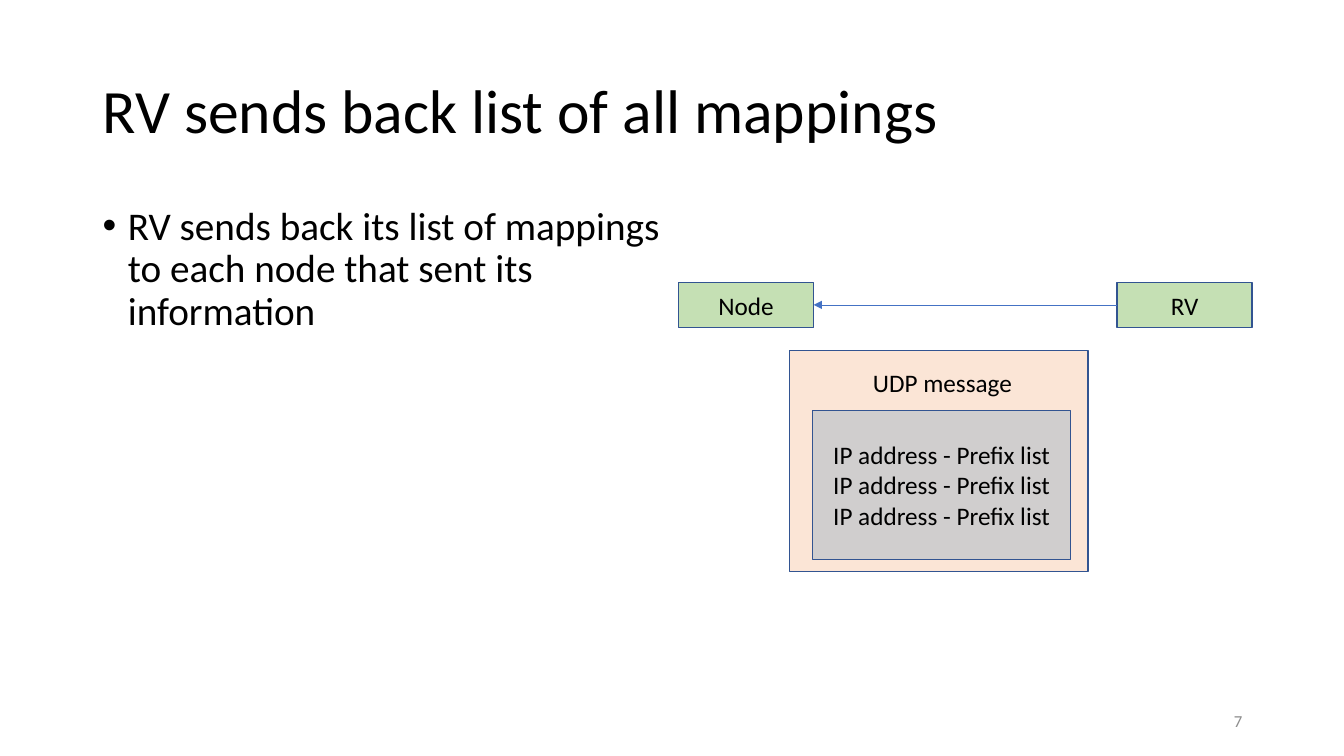
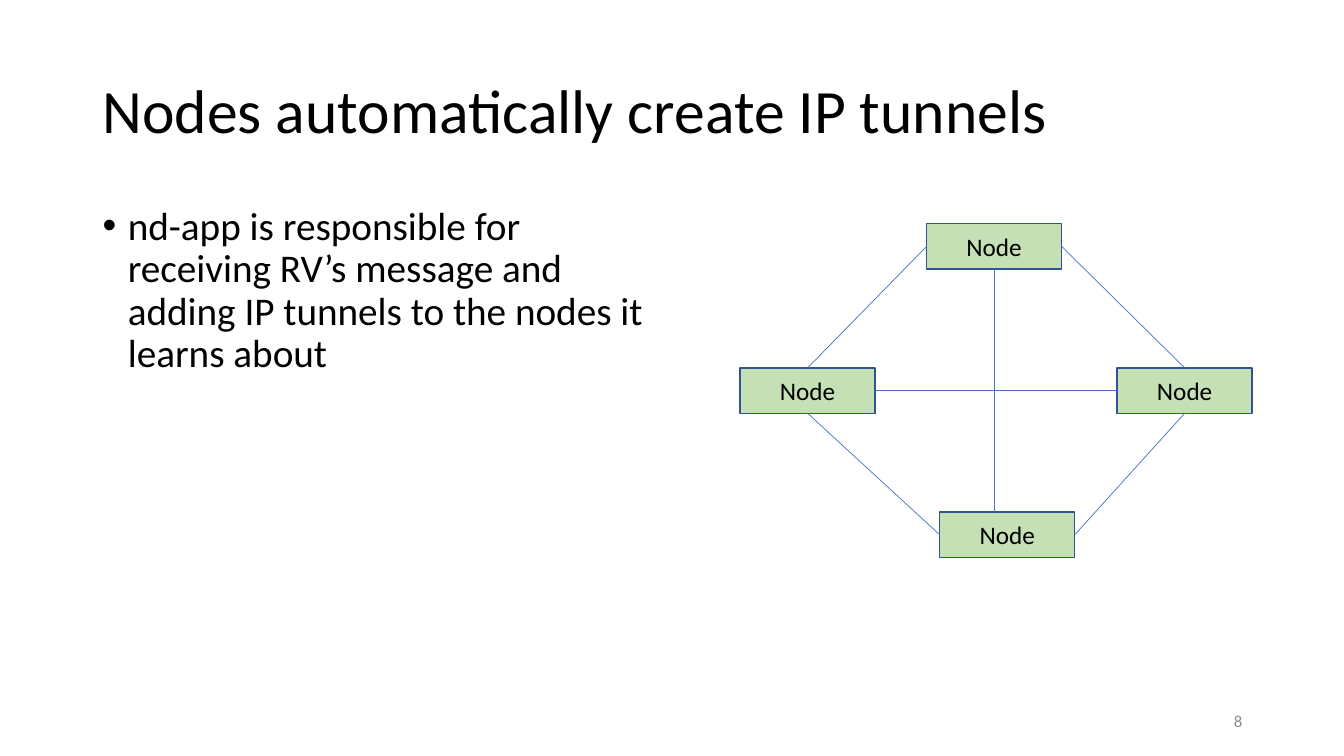
from dataclasses import dataclass
from typing import Any, NamedTuple, Optional

from lxml.etree import SubElement
from pptx import Presentation
from pptx.dml.color import RGBColor
from pptx.enum.shapes import MSO_CONNECTOR, MSO_SHAPE
from pptx.enum.text import MSO_ANCHOR, PP_ALIGN
from pptx.oxml.ns import qn
from pptx.util import Inches, Pt

FONT = "Calibri"
BLACK = RGBColor(0x00, 0x00, 0x00)
GRAY = RGBColor(0x8C, 0x8C, 0x8C)
GREEN = RGBColor(0xC5, 0xE0, 0xB4)
PEACH = RGBColor(0xFB, 0xE5, 0xD6)
SILVER = RGBColor(0xD0, 0xCE, 0xCE)
BORDER = RGBColor(0x32, 0x54, 0x91)
LINK = RGBColor(0x44, 0x72, 0xC4)

TOP, LEFT, BOTTOM, RIGHT = range(4)
NODE_W, NODE_H = 1.34, 0.45


class Area(NamedTuple):
    left: float
    top: float
    width: float
    height: float

    def lengths(self) -> list:
        return [Inches(v) for v in self]


@dataclass(frozen=True)
class TextStyle:
    size: int
    paragraph: dict
    color: RGBColor = BLACK
    anchor: MSO_ANCHOR = MSO_ANCHOR.TOP
    bullet: bool = False


@dataclass(frozen=True)
class Box:
    area: Area
    fill: RGBColor
    lines: tuple = ()


@dataclass(frozen=True)
class Link:
    start: str
    start_side: int
    end: str
    end_side: int
    arrow: bool = False


TITLE = TextStyle(44, {"line_spacing": 0.9}, anchor=MSO_ANCHOR.MIDDLE)
BODY = TextStyle(28, {"line_spacing": 0.9, "space_before": Pt(10)}, bullet=True)
NUMBER = TextStyle(12, {"alignment": PP_ALIGN.RIGHT}, GRAY, MSO_ANCHOR.MIDDLE)
LABEL = TextStyle(18, {"alignment": PP_ALIGN.CENTER}, anchor=MSO_ANCHOR.MIDDLE)
CAPTION = TextStyle(18, {"alignment": PP_ALIGN.LEFT})

TITLE_AREA = Area(0.92, 0.4, 11.5, 1.45)
NUMBER_AREA = Area(9.42, 6.95, 3, 0.4)


def write(sp: Any, lines: tuple, style: TextStyle) -> None:
    tf = sp.text_frame
    for name, value in {"word_wrap": True, "vertical_anchor": style.anchor}.items():
        setattr(tf, name, value)
    for i, line in enumerate(lines):
        p = tf.add_paragraph() if i else tf.paragraphs[0]
        for name, value in style.paragraph.items():
            setattr(p, name, value)
        if style.bullet:
            add_bullet(p)
        r = p.add_run()
        r.text = line
        for name, value in {"name": FONT, "size": Pt(style.size)}.items():
            setattr(r.font, name, value)
        r.font.color.rgb = style.color


def add_bullet(p: Any) -> None:
    pPr = p._p.get_or_add_pPr()
    indent = Inches(0.25)
    pPr.set("marL", str(indent))
    pPr.set("indent", str(-indent))
    SubElement(pPr, qn("a:buFont")).set("typeface", "Arial")
    SubElement(pPr, qn("a:buChar")).set("char", "•")


def add_text(s: Any, area: Area, text: str, style: TextStyle) -> None:
    write(s.shapes.add_textbox(*area.lengths()), (text,), style)


def add_box(s: Any, box: Box) -> Any:
    sp = s.shapes.add_shape(MSO_SHAPE.RECTANGLE, *box.area.lengths())
    sp.shadow.inherit = False
    sp.fill.solid()
    sp.fill.fore_color.rgb = box.fill
    sp.line.color.rgb = BORDER
    sp.line.width = Pt(1)
    write(sp, box.lines, LABEL)
    return sp


def add_line(s: Any, x1: float, y1: float, x2: float, y2: float, arrow: bool = False) -> Any:
    ends = [Inches(v) for v in (x1, y1, x2, y2)]
    line = s.shapes.add_connector(MSO_CONNECTOR.STRAIGHT, *ends)
    line.line.color.rgb = LINK
    line.line.width = Pt(0.5)
    if arrow:
        SubElement(line.line._get_or_add_ln(), qn("a:tailEnd")).set("type", "triangle")
    SubElement(line._element.spPr, qn("a:effectLst"))
    return line


def add_links(s: Any, nodes: dict, links: tuple) -> None:
    for link in links:
        line = add_line(s, 0, 0, 0, 0, link.arrow)
        line.begin_connect(nodes[link.start], link.start_side)
        line.end_connect(nodes[link.end], link.end_side)


def node(left: float, top: float, label: str = "Node") -> Box:
    return Box(Area(left, top, NODE_W, NODE_H), GREEN, (label,))


def add_page(prs: Any, number: int, title: str, body: str, body_width: float) -> Any:
    s = prs.slides.add_slide(prs.slide_layouts[6])
    add_text(s, TITLE_AREA, title, TITLE)
    add_text(s, Area(0.92, 2, body_width, 4.76), body, BODY)
    add_text(s, NUMBER_AREA, str(number), NUMBER)
    return s


def mappings_slide(prs: Any) -> None:
    s = add_page(
        prs, 7, "RV sends back list of all mappings",
        "RV sends back its list of mappings to each node that sent its information", 5.8,
    )
    boxes = {"node": node(6.73, 2.8), "rv": node(11.08, 2.8, "RV")}
    nodes = {name: add_box(s, box) for name, box in boxes.items()}
    add_links(s, nodes, (Link("rv", LEFT, "node", RIGHT, arrow=True),))
    message = Box(Area(7.83, 3.48, 2.96, 2.19), PEACH)
    payload = Box(Area(8.06, 4.07, 2.56, 1.48), SILVER, ("IP address - Prefix list",) * 3)
    for box in (message, payload):
        add_box(s, box)
    add_text(s, Area(8.56, 3.59, 1.71, 0.4), "UDP message", CAPTION)


def tunnels_slide(prs: Any) -> None:
    s = add_page(
        prs, 8, "Nodes automatically create IP tunnels",
        "nd-app is responsible for receiving RV’s message and "
        "adding IP tunnels to the nodes it learns about", 5.64,
    )
    boxes = {
        "west": node(7.34, 3.65),
        "north": node(9.19, 2.22),
        "east": node(11.08, 3.65),
        "south": node(9.32, 5.08),
    }
    nodes = {name: add_box(s, box) for name, box in boxes.items()}
    add_links(s, nodes, (
        Link("west", TOP, "north", LEFT),
        Link("west", RIGHT, "east", LEFT),
        Link("west", BOTTOM, "south", LEFT),
        Link("north", RIGHT, "east", TOP),
        Link("east", BOTTOM, "south", RIGHT),
    ))
    north = boxes["north"].area
    x = north.left + NODE_W / 2
    vertical = add_line(s, x, north.top + NODE_H, x, boxes["south"].area.top)
    vertical.begin_connect(nodes["north"], BOTTOM)


def main() -> None:
    prs = Presentation()
    prs.slide_width, prs.slide_height = Inches(13.33), Inches(7.5)
    mappings_slide(prs)
    tunnels_slide(prs)
    prs.save("out.pptx")


if __name__ == "__main__":
    main()
